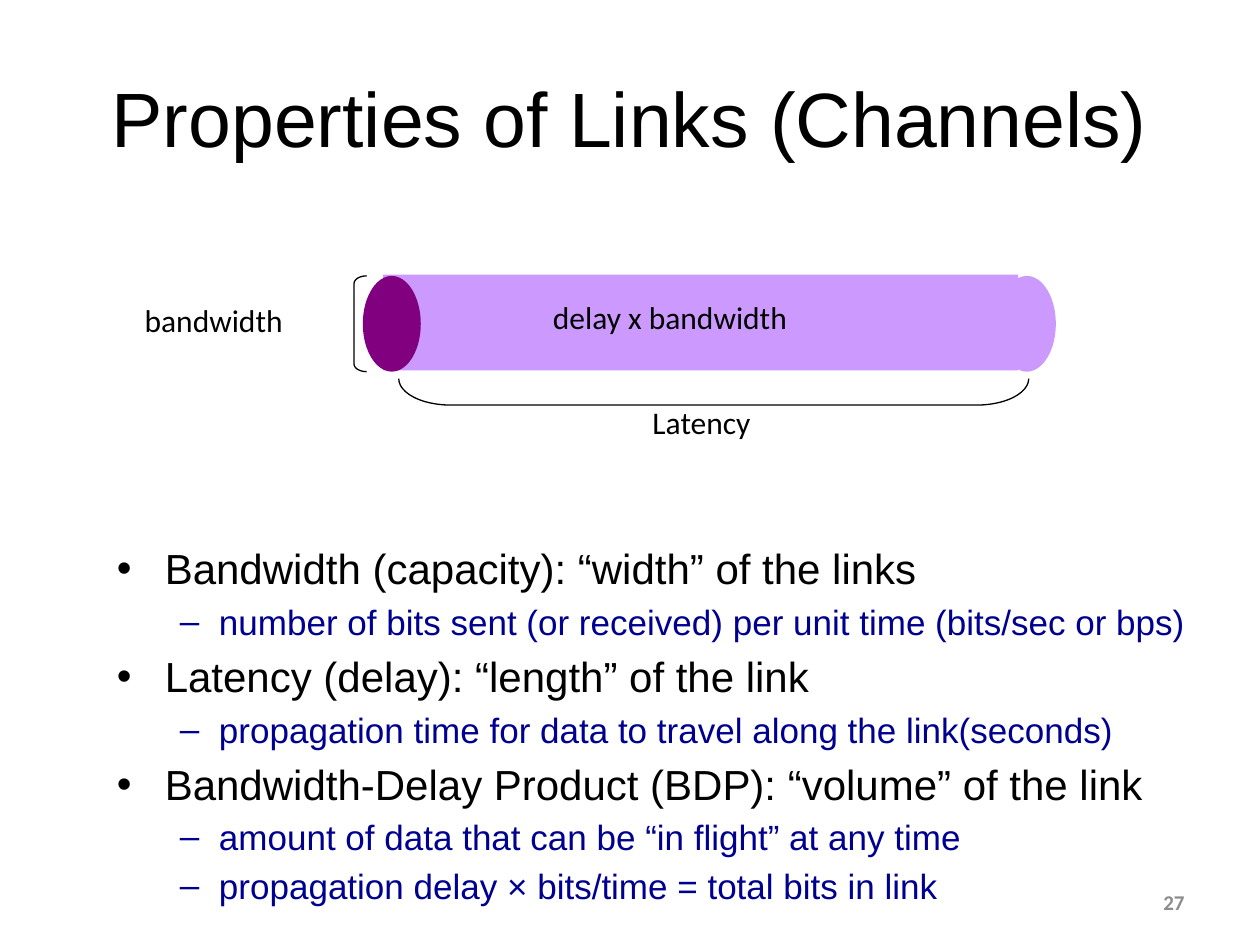
"""Build a slide on the bandwidth, latency and bandwidth-delay product of links."""
from lxml.etree import SubElement
from pptx import Presentation
from pptx.dml.color import RGBColor
from pptx.enum.shapes import MSO_SHAPE
from pptx.enum.text import MSO_ANCHOR, PP_ALIGN
from pptx.oxml.ns import qn
from pptx.util import Inches, Pt

BLACK = RGBColor(0x00, 0x00, 0x00)
NAVY = RGBColor(0x00, 0x00, 0x90)
GRAY = RGBColor(0x8C, 0x8C, 0x8C)
LILAC = RGBColor(0xCC, 0x99, 0xFF)
PURPLE = RGBColor(0x80, 0x00, 0x80)


def style_text(paragraph, font_name, size, color, bold=False):
    for span in paragraph.runs:
        span.font.name = font_name
        span.font.size = Pt(size)
        span.font.color.rgb = color
        span.font.bold = bold


def add_box(left, top, width, height):
    box = page.shapes.add_textbox(Inches(left), Inches(top), Inches(width), Inches(height))
    box.text_frame.word_wrap = True
    return box


deck = Presentation()
deck.slide_width, deck.slide_height = Inches(10), Inches(7.5)
page = deck.slides.add_slide(deck.slide_layouts[5])

title = page.shapes.title
title.left, title.top = Inches(0.5), Inches(0.3)
title.width, title.height = Inches(9), Inches(1.25)
title.text_frame.text = "Properties of Links (Channels)"
title.text_frame.vertical_anchor = MSO_ANCHOR.MIDDLE
title.text_frame.paragraphs[0].alignment = PP_ALIGN.CENTER
style_text(title.text_frame.paragraphs[0], "Arial", 44, BLACK)

points = [
    (0, "Bandwidth (capacity): “width” of the links"),
    (1, "number of bits sent (or received) per unit time (bits/sec or bps)"),
    (0, "Latency (delay): “length” of the link"),
    (1, "propagation time for data to travel along the link(seconds)"),
    (0, "Bandwidth-Delay Product (BDP): “volume” of the link"),
    (1, "amount of data that can be “in flight” at any time"),
    (1, "propagation delay × bits/time = total bits in link"),
]
level_styles = [("•", 0.38, 0.38, 24, BLACK), ("–", 0.81, 0.31, 20, NAVY)]
body = add_box(0.83, 4.26, 9.33, 3.24)
body.text_frame.text = "\n".join(text for level, text in points)
for paragraph, (level, text) in zip(body.text_frame.paragraphs, points):
    bullet, margin, hanging, size, color = level_styles[level]
    paragraph.level = level
    paragraph.space_before = Pt(size * 0.2)
    style_text(paragraph, "Arial", size, color)
    properties = paragraph._p.get_or_add_pPr()
    properties.set("marL", str(Inches(margin)))
    properties.set("indent", str(-Inches(hanging)))
    SubElement(properties, qn("a:buFont")).set("typeface", "Arial")
    SubElement(properties, qn("a:buChar")).set("char", bullet)

pipe_parts = [
    (MSO_SHAPE.OVAL, 7.92, 2.19, 0.46, LILAC),
    (MSO_SHAPE.RECTANGLE, 3.04, 2.18, 5.04, LILAC),
    (MSO_SHAPE.OVAL, 2.88, 2.19, 0.46, PURPLE),
]
for kind, left, top, width, color in pipe_parts:
    part = page.shapes.add_shape(kind, Inches(left), Inches(top), Inches(width), Inches(0.76))
    part.shadow.inherit = False
    part.fill.solid()
    part.fill.fore_color.rgb = color
    part.line.fill.background()

brackets = [
    (2.81, 2.19, 0.1, 0.76, 0, 0.61),
    (5.56, 0.61, 0.21, 5, 270, 1.98),
]
for left, top, width, height, rotation, curve in brackets:
    bracket = page.shapes.add_shape(
        MSO_SHAPE.LEFT_BRACKET, Inches(left), Inches(top), Inches(width), Inches(height)
    )
    bracket.rotation = rotation
    bracket.adjustments[0] = curve
    bracket.shadow.inherit = False
    bracket.fill.background()
    bracket.line.color.rgb = BLACK
    bracket.line.width = Pt(0.75)

labels = [
    ("bandwidth", 1.05, 2.34, 1.7),
    ("Latency", 5.08, 3.15, 1.38),
    ("delay x bandwidth", 4.29, 2.32, 3.03),
]
for text, left, top, width in labels:
    label = add_box(left, top, width, 0.43)
    label.text_frame.text = text
    style_text(label.text_frame.paragraphs[0], "Calibri", 18, BLACK)

number = add_box(7.17, 6.96, 2.33, 0.4)
number.text_frame.text = "27"
number.text_frame.vertical_anchor = MSO_ANCHOR.MIDDLE
number.text_frame.paragraphs[0].alignment = PP_ALIGN.RIGHT
style_text(number.text_frame.paragraphs[0], "Calibri", 12, GRAY, bold=True)

deck.save("out.pptx")
